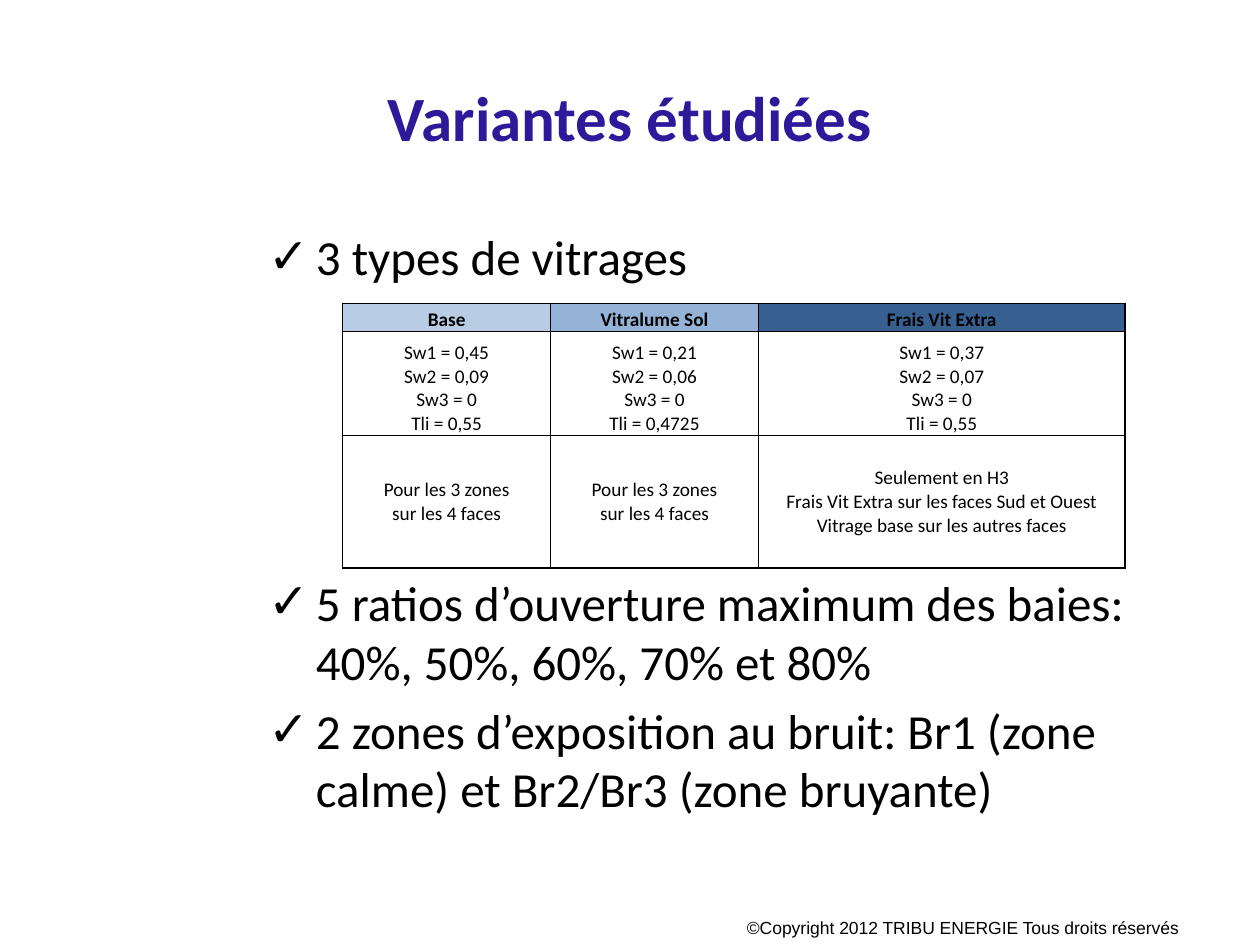
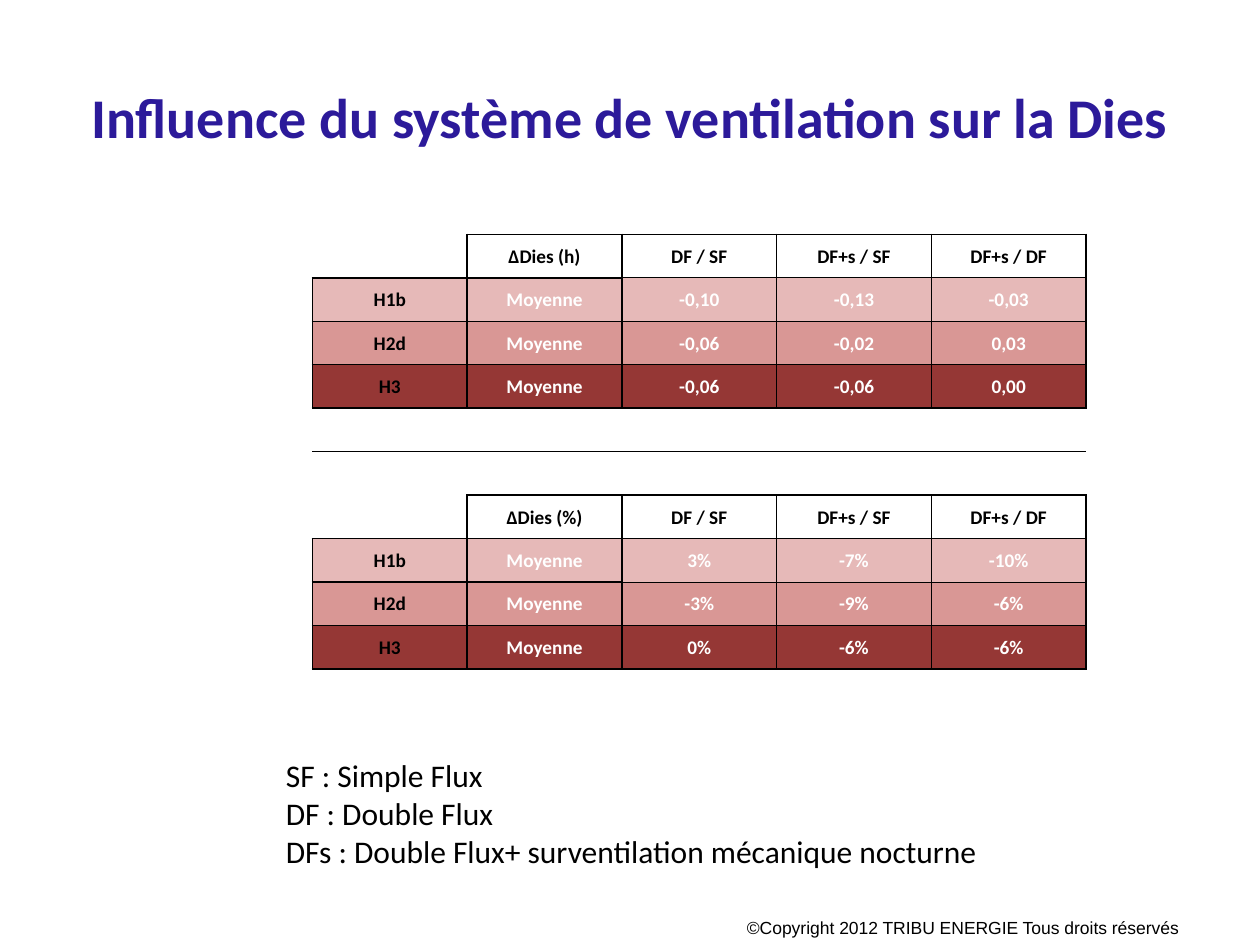
from copy import deepcopy

from lxml import etree
from pptx import Presentation
from pptx.dml.color import RGBColor
from pptx.enum.text import MSO_ANCHOR, PP_ALIGN
from pptx.oxml.ns import qn
from pptx.util import Inches, Pt

LEFT, CENTER = PP_ALIGN.LEFT, PP_ALIGN.CENTER
TOP, MIDDLE, BOTTOM = MSO_ANCHOR.TOP, MSO_ANCHOR.MIDDLE, MSO_ANCHOR.BOTTOM

COLORS = {
    "title": "2C1A9A", "text": "000000", "light_text": "FFFFFF", "background": "FFFFFF",
    "blue_light": "B8CCE4", "blue_medium": "95B3D7", "blue_dark": "376091",
    "red_light": "E6B9B8", "red_medium": "D99795", "red_dark": "953735",
}
NO_STYLE_TABLE = "{2D5ABB26-0587-4C30-8999-92F81FD0307C}"
# Border tag, and the step in rows and columns to the neighbouring cell
SIDES = {"lnL": (0, -1), "lnR": (0, 1), "lnT": (-1, 0), "lnB": (1, 0)}
THICK, THIN = 1, 0.5

COPYRIGHT = "©Copyright 2012 TRIBU ENERGIE Tous droits réservés"

BULLETS = [  # text, space before in points
    ("3 types de vitrages", 0),
    ("5 ratios d’ouverture maximum des baies: 40%, 50%, 60%, 70% et 80%", 164),
    ("2 zones d’exposition au bruit: Br1 (zone calme) et Br2/Br3 (zone bruyante)", 5.6),
]
GLAZING_ROWS = [
    ["Base", "Vitralume Sol", "Frais Vit Extra"],
    ["Sw1 = 0,45\nSw2 = 0,09\nSw3 = 0\nTli = 0,55",
     "Sw1 = 0,21\nSw2 = 0,06\nSw3 = 0\nTli = 0,4725",
     "Sw1 = 0,37\nSw2 = 0,07\nSw3 = 0\nTli = 0,55"],
    ["Pour les 3 zones\nsur les 4 faces",
     "Pour les 3 zones\nsur les 4 faces",
     "Seulement en H3\nFrais Vit Extra sur les faces Sud et Ouest\n"
     "Vitrage base sur les autres faces"],
]
GLAZING_FILLS = ["blue_light", "blue_medium", "blue_dark"]

COMPARISONS = ["DF / SF", "DF+s / SF", "DF+s / DF"]
ZONE_FILLS = {"H1b": "red_light", "H2d": "red_medium", "H3": "red_dark"}
DIES_VALUES = {
    "ΔDies (h)": [["-0,10", "-0,13", "-0,03"], ["-0,06", "-0,02", "0,03"],
                  ["-0,06", "-0,06", "0,00"]],
    "ΔDies (%)": [["3%", "-7%", "-10%"], ["-3%", "-9%", "-6%"], ["0%", "-6%", "-6%"]],
}
LEGEND = ["SF : Simple Flux", "DF : Double Flux",
          "DFs : Double Flux+ surventilation mécanique nocturne"]


def set_attributes(target, values):
    for name, value in values.items():
        setattr(target, name, value)


def write_paragraph(paragraph, text, size, color="text", bold=False, font="Calibri",
                    alignment=LEFT):
    paragraph.alignment = alignment
    paragraph.text = text
    for run in paragraph.runs:
        set_attributes(run.font, {"name": font, "size": Pt(size), "bold": bold})
        run.font.color.rgb = RGBColor.from_string(COLORS[color])
    # Line breaks take the format of the text around them
    for line_break in paragraph._p.findall(qn("a:br")):
        line_break.append(deepcopy(paragraph.runs[0]._r.rPr))


def add_text(slide, box, texts, size, anchor=TOP, **text_format):
    shape = slide.shapes.add_textbox(*map(Inches, box))
    frame = shape.text_frame
    set_attributes(frame, {"word_wrap": True, "vertical_anchor": anchor})
    for index, text in enumerate(texts):
        paragraph = frame.add_paragraph() if index else frame.paragraphs[0]
        write_paragraph(paragraph, text, size, **text_format)
    return frame


def add_check_mark(paragraph, space_before):
    properties = paragraph._p.get_or_add_pPr()
    properties.set("marL", str(Inches(0.38)))
    properties.set("indent", str(-Inches(0.38)))
    etree.SubElement(properties, qn("a:buFont"), typeface="Arial")
    etree.SubElement(properties, qn("a:buChar"), char="✓")
    if space_before:
        paragraph.space_before = Pt(space_before)


def set_border(cell, tag, width):
    properties = cell._tc.get_or_add_tcPr()
    line = etree.SubElement(properties, qn(f"a:{tag}"), w=str(Pt(width)))
    fill = etree.SubElement(line, qn("a:solidFill"))
    etree.SubElement(fill, qn("a:srgbClr"), val=COLORS["text"])


def add_table(slide, box, rows, column_widths, row_heights, margins, cell_format, is_thin):
    """cell_format(row, column) gives fill, anchor and text format; is_thin picks thin borders."""
    frame = slide.shapes.add_table(len(rows), len(rows[0]), *map(Inches, box))
    table = frame.table
    set_attributes(table, {"first_row": False, "horz_banding": False})
    table._tbl.tblPr.find(qn("a:tableStyleId")).text = NO_STYLE_TABLE
    for column, width in zip(table.columns, column_widths):
        column.width = Inches(width)
    for row, height in zip(table.rows, row_heights):
        row.height = Inches(height)

    def has_text(row, column):
        return 0 <= row < len(rows) and 0 <= column < len(rows[0]) and bool(rows[row][column])

    for r, texts in enumerate(rows):
        for c, text in enumerate(texts):
            cell = table.cell(r, c)
            fill, anchor, text_format = cell_format(r, c)
            set_attributes(cell, dict(margins, vertical_anchor=anchor))
            write_paragraph(cell.text_frame.paragraphs[0], text, 11, alignment=CENTER,
                            **text_format)
            # Borders come before the fill in the cell properties
            for tag, (down, right) in SIDES.items():
                neighbour = has_text(r + down, c + right)
                if text or neighbour:
                    thin = text and neighbour and is_thin(r, c, tag)
                    set_border(cell, tag, THIN if thin else THICK)
            if fill:
                cell.fill.solid()
                cell.fill.fore_color.rgb = RGBColor.from_string(COLORS[fill])
            else:
                cell.fill.background()


def add_slide(presentation, title, title_size):
    slide = presentation.slides.add_slide(presentation.slide_layouts[6])
    slide.background.fill.solid()
    slide.background.fill.fore_color.rgb = RGBColor.from_string(COLORS["background"])
    add_text(slide, (5.83, 7.23, 4.17, 0.27), [COPYRIGHT], 10, font="Arial")
    add_text(slide, (0.5, 0.3, 9, 1.25), [title], title_size, anchor=MIDDLE,
             color="title", bold=True, alignment=CENTER)
    return slide


def add_glazing_table(slide):
    def cell_format(row, column):
        fill = GLAZING_FILLS[column] if row == 0 else None
        return fill, MIDDLE if row == 2 else BOTTOM, {"bold": row == 0}

    def is_thin(row, column, tag):
        return tag in ("lnL", "lnR") or (row, tag) in ((1, "lnB"), (2, "lnT"))

    margins = dict.fromkeys(("margin_left", "margin_right", "margin_top", "margin_bottom"), 0)
    add_table(slide, (2.72, 2.41, 6.22, 2.1), GLAZING_ROWS, [1.65, 1.65, 2.91],
              [0.22, 0.83, 1.05], margins, cell_format, is_thin)


def add_dies_table(slide):
    # Two blocks of a heading and three zones, with two blank rows between
    rows, zones = [], list(ZONE_FILLS)
    for heading, values in DIES_VALUES.items():
        if rows:
            rows += [[""] * 5, [""] * 5]
        rows.append(["", heading, *COMPARISONS])
        rows += [[zone, "Moyenne", *line] for zone, line in zip(zones, values)]

    def cell_format(row, column):
        fill = ZONE_FILLS.get(rows[row][0])
        color = "light_text" if fill and column else "text"
        return fill, MIDDLE, {"color": color, "bold": True}

    def is_thin(row, column, tag):
        return column >= 2 and tag in ("lnT", "lnB")

    margins = dict.fromkeys(("margin_left", "margin_right", "margin_top"), Inches(0.01))
    margins["margin_bottom"] = 0
    width, height = 6.14, 3.45
    add_table(slide, (2.48, 1.86, width, height), rows, [width / 5] * 5,
              [height / len(rows)] * len(rows), margins, cell_format, is_thin)


def main():
    presentation = Presentation()
    set_attributes(presentation, {"slide_width": Inches(10), "slide_height": Inches(7.5)})

    # Variants studied
    slide = add_slide(presentation, "Variantes étudiées", 36)
    body = add_text(slide, (2.03, 1.75, 7.47, 4.95), [text for text, _ in BULLETS], 28)
    for paragraph, (_, space_before) in zip(body.paragraphs, BULLETS):
        add_check_mark(paragraph, space_before)
    add_glazing_table(slide)

    # Influence of the ventilation system
    slide = add_slide(presentation, "Influence du système de ventilation sur la Dies", 32)
    add_text(slide, (2.17, 5.95, 6.52, 1.01), LEGEND, 18)
    add_dies_table(slide)

    presentation.save("out.pptx")


if __name__ == "__main__":
    main()
